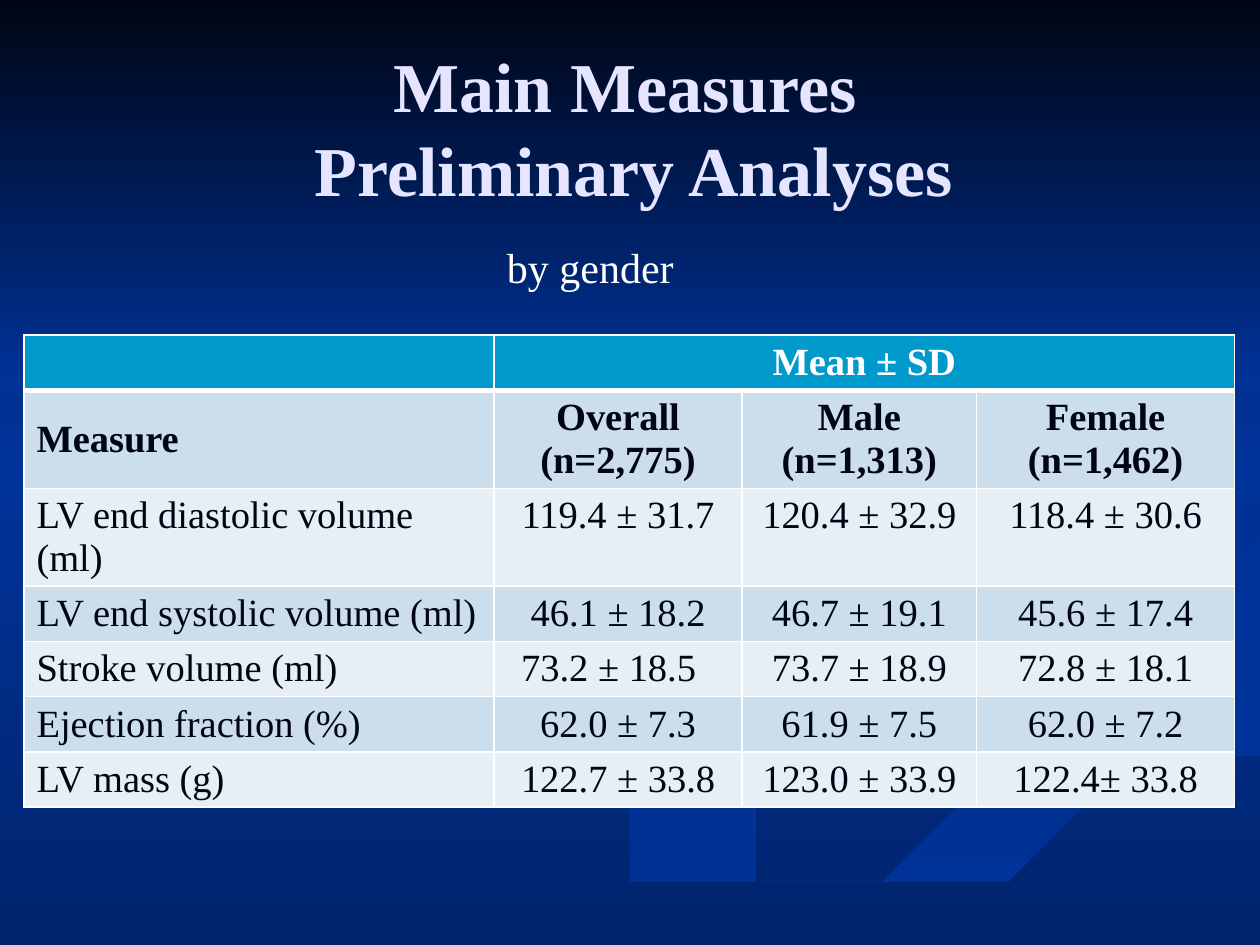
from copy import deepcopy

from lxml import etree
from pptx import Presentation
from pptx.dml.color import RGBColor
from pptx.enum.shapes import MSO_SHAPE
from pptx.enum.text import MSO_ANCHOR, PP_ALIGN
from pptx.oxml.ns import qn
from pptx.util import Inches, Pt

LEFT, CENTER = PP_ALIGN.LEFT, PP_ALIGN.CENTER
TOP, MIDDLE = MSO_ANCHOR.TOP, MSO_ANCHOR.MIDDLE
RECTANGLE = MSO_SHAPE.RECTANGLE

FONT = "Times New Roman"
WHITE, INK, LILAC = "FFFFFF", "000514", "E5E5FF"
BLUE, NAVY = "003399", "00246D"
HEADER, BAND, PALE = "0099CC", "CCDEEC", "E7EFF6"

# Each ribbon: curved edges in drawing order, gradient colours, angle
RIBBONS = [
    ([[(3, 7.49), (4.17, 6.9), (5.79, 6.39), (7.85, 5.7), (6.79, 5.19), (5.75, 4.59)],
      [(6.61, 5.13), (8, 5.81), (6.23, 6.47), (4.66, 7), (3.61, 7.49)]],
     [BLUE, "003193"], 0),
    ([[(5.03, 7.49), (6.3, 6.93), (7.64, 6.47), (9.98, 5.81)],
      [(9.98, 6.09), (8.21, 6.51), (6.7, 7.02), (5.71, 7.49)]],
     ["002F8C", BLUE], 90),
    ([[(4.77, 7.49), (6.19, 6.84), (7.8, 6.34), (9.43, 5.7), (7.93, 5.09),
       (7.25, 4.64), (8.08, 4.17), (9.99, 3.87)],
      [(9.99, 4.02), (8.5, 4.27), (7.81, 4.63), (8.66, 5.09), (9.99, 5.38)],
      [(9.99, 5.81), (7.65, 6.47), (6.3, 6.93), (5.03, 7.49)]],
     [BLUE, BLUE], 0),
    ([[(9.98, 4.02), (8.5, 4.27), (7.81, 4.6), (8.26, 4.96)],
      [(8.05, 4.72), (8.43, 4.48), (9.98, 4.2)]],
     ["003091", BLUE], 45),
]

COLUMNS = [3.73, 1.97, 1.86, 2.05]
ROWS = [
    ["", "Mean ± SD", "", ""],
    ["Measure", "Overall\n(n=2,775)", "Male\n(n=1,313)", "Female\n(n=1,462)"],
    ["LV end diastolic volume (ml)", "119.4 ± 31.7", "120.4 ± 32.9", "118.4 ± 30.6"],
    ["LV end systolic volume (ml)", "46.1 ± 18.2", "46.7 ± 19.1", "45.6 ± 17.4"],
    ["Stroke volume (ml)", "73.2 ± 18.5", "73.7 ± 18.9", "72.8 ± 18.1"],
    ["Ejection fraction (%)", "62.0 ± 7.3", "61.9 ± 7.5", "62.0 ± 7.2"],
    ["LV mass (g)", "122.7 ± 33.8", "123.0 ± 33.9", "122.4± 33.8"],
]


def rgb(color):
    return RGBColor.from_string(color)


def smooth(points, steps=6):
    """Return points along a Catmull-Rom curve through the given ones."""
    padded = [points[0], *points, points[-1]]
    curve = [points[0]]
    for a, b, c, d in zip(padded, padded[1:], padded[2:], padded[3:]):
        for step in range(1, steps + 1):
            t = step / steps
            curve.append(tuple(
                q + t * (r - p + t * (2 * p - 5 * q + 4 * r - s
                                      + t * (3 * q - p - 3 * r + s))) / 2
                for p, q, r, s in zip(a, b, c, d)))
    return curve


def write(tf, text, size=22, color=INK, bold=False, align=CENTER):
    for i, line in enumerate(text.split("\n")):
        p = tf.add_paragraph() if i else tf.paragraphs[0]
        p.text = line
        p.alignment = align
        for r in p.runs:
            r.font.name = FONT
            r.font.size = Pt(size)
            r.font.bold = bold
            r.font.color.rgb = rgb(color)


def gradient(fill, element, colors, angle):
    """Spread the colours evenly; the angle runs clockwise."""
    fill.gradient()
    fill.gradient_angle = -angle % 360
    stops = element.find(".//" + qn("a:gsLst"))
    for _ in colors[2:]:
        stops.append(deepcopy(stops[0]))
    for i, (stop, color) in enumerate(zip(fill.gradient_stops, colors)):
        stop.position = i / (len(colors) - 1)
        stop.color.rgb = rgb(color)


def borders(cell, bottom=1):
    tc_pr = cell._tc.get_or_add_tcPr()
    widths = {"lnL": 1, "lnR": 1, "lnT": 1, "lnB": bottom}
    for i, (side, width) in enumerate(widths.items()):
        ln = etree.Element(qn("a:" + side), w=str(int(Pt(width))))
        fill = etree.SubElement(ln, qn("a:solidFill"))
        etree.SubElement(fill, qn("a:srgbClr"), val=WHITE)
        tc_pr.insert(i, ln)


class Deck:
    """Holds the presentation and its current slide."""

    def __init__(self):
        self.prs = Presentation()
        self.prs.slide_width, self.prs.slide_height = Inches(10), Inches(7.5)
        self.s = self.prs.slides.add_slide(self.prs.slide_layouts[5])

    def background(self, colors):
        gradient(self.s.background.fill, self.s.element, colors, 90)

    def finish(self, sp, colors, angle):
        sp.shadow.inherit = False
        sp.line.fill.background()
        gradient(sp.fill, sp.element, colors, angle)

    def ribbon(self, edges, colors, angle):
        points = [point for edge in edges for point in smooth(edge)]
        builder = self.s.shapes.build_freeform(*points[0], scale=Inches(1))
        builder.add_line_segments(points[1:], close=True)
        self.finish(builder.convert_to_shape(), colors, angle)

    def rectangle(self, box, colors, angle):
        sp = self.s.shapes.add_shape(RECTANGLE, *map(Inches, box))
        self.finish(sp, colors, angle)

    def title(self, text, box):
        sp = self.s.shapes.title
        sp.left, sp.top, sp.width, sp.height = map(Inches, box)
        sp.text_frame.vertical_anchor = MIDDLE
        write(sp.text_frame, text, size=40, color=LILAC, bold=True)
        # Bring the title in front of the decoration
        self.s.shapes.element.append(sp.element)

    def text(self, text, box, **style):
        tf = self.s.shapes.add_textbox(*map(Inches, box)).text_frame
        tf.word_wrap = True
        write(tf, text, **style)

    def table(self, rows, columns, left, top, row_height):
        table = self.s.shapes.add_table(
            len(rows), len(columns), Inches(left), Inches(top),
            Inches(sum(columns)), Inches(row_height * len(rows))).table
        for column, width in zip(table.columns, columns):
            column.width = Inches(width)
        for i, row in enumerate(rows):
            table.rows[i].height = Inches(row_height)
            for j, text in enumerate(row):
                cell = table.cell(i, j)
                cell.fill.solid()
                cell.fill.fore_color.rgb = rgb(
                    HEADER if i == 0 else BAND if i % 2 else PALE)
                cell.vertical_anchor = MIDDLE if (i, j) == (1, 0) else TOP
                borders(cell, bottom=1 if i else 3)
                write(cell.text_frame, text, bold=i < 2,
                      color=INK if i else WHITE, align=CENTER if j else LEFT)
        table.cell(0, 1).merge(table.cell(0, len(columns) - 1))
        return table


def main():
    deck = Deck()
    deck.background([NAVY, BLUE, NAVY])
    for ribbon in RIBBONS:
        deck.ribbon(*ribbon)
    deck.rectangle((0, 0, 10, 3.08), [INK, BLUE], 90)
    deck.title("Main Measures \vPreliminary Analyses", (0.53, 0.16, 9, 1.69))
    table = deck.table(ROWS, COLUMNS, 0.19, 2.66, 0.41)
    table.cell(4, 1).margin_right = Inches(0.25)
    deck.text("by gender", (3.82, 1.87, 1.73, 0.5), size=24, color=WHITE)
    deck.prs.save("out.pptx")


if __name__ == "__main__":
    main()
